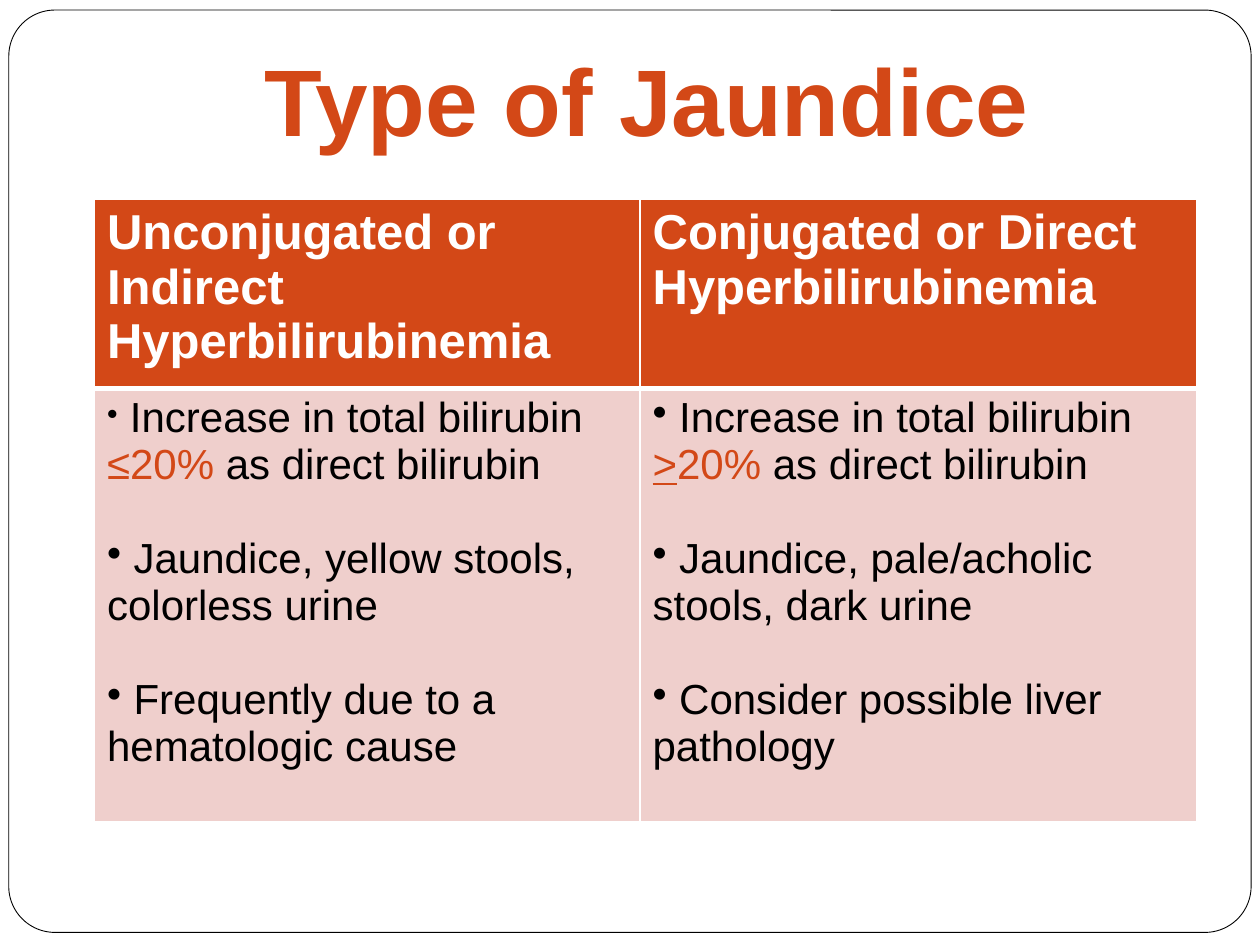
import pptx
import pptx.dml.color
import pptx.enum.shapes
import pptx.enum.text
import pptx.oxml
import pptx.oxml.ns
import pptx.util
from pptx.util import Inches

ACCENT, TINT, WHITE, BLACK = "D34817", "EFCFCC", "FFFFFF", "000000"
FONT = "Arial"
BODY_SIZE = 24

HEADERS = [
    "Unconjugated or Indirect Hyperbilirubinemia",
    "Conjugated or Direct Hyperbilirubinemia",
]
# Each point is a list of runs: text, colour, underlined
POINTS = [
    [
        [(" Increase in total bilirubin ", BLACK, False), ("≤20% ", ACCENT, False),
         ("as direct bilirubin", BLACK, False)],
        [(" Jaundice, yellow stools, colorless urine", BLACK, False)],
        [(" Frequently due to a hematologic cause", BLACK, False)],
    ],
    [
        [(" Increase in total bilirubin ", BLACK, False), (">", ACCENT, True),
         ("20% ", ACCENT, False), ("as direct bilirubin", BLACK, False)],
        [(" Jaundice, pale/acholic stools, dark urine", BLACK, False)],
        [(" Consider possible liver pathology", BLACK, False)],
    ],
]


def color(value):
    return pptx.dml.color.RGBColor.from_string(value)


def set_font(font, size, value, bold=False):
    font.name = FONT
    font.size = pptx.util.Pt(size)
    font.bold = bold
    font.color.rgb = color(value)


def add_frame(slide):
    frame = slide.shapes.add_shape(
        pptx.enum.shapes.MSO_SHAPE.ROUNDED_RECTANGLE,
        Inches(0.07), Inches(0.08), Inches(9.86), Inches(7.32))
    frame.adjustments[0] = 0.05
    frame.shadow.inherit = False
    frame.fill.solid()
    frame.fill.fore_color.rgb = color(WHITE)
    frame.line.color.rgb = color(BLACK)
    frame.line.width = pptx.util.Pt(0.5)


def add_title(slide, text):
    box = slide.shapes.add_textbox(Inches(2), Inches(0.33), Inches(6.42), Inches(1))
    text_frame = box.text_frame
    text_frame.word_wrap = True
    text_frame.vertical_anchor = pptx.enum.text.MSO_ANCHOR.BOTTOM
    text_frame.margin_bottom = Inches(0.1)
    paragraph = text_frame.paragraphs[0]
    paragraph.text = text
    set_font(paragraph.font, 54, ACCENT, bold=True)


def style_cell(cell, fill, bottom_width):
    """Give the cell white borders and a solid fill."""
    properties = cell._tc.get_or_add_tcPr()
    widths = {"lnL": 1, "lnR": 1, "lnT": 1, "lnB": bottom_width}
    for side, width in widths.items():
        properties.append(pptx.oxml.parse_xml(
            f'<a:{side} {pptx.oxml.ns.nsdecls("a")} w="{pptx.util.Pt(width)}">'
            f'<a:solidFill><a:srgbClr val="{WHITE}"/></a:solidFill></a:{side}>'))
    cell.fill.solid()
    cell.fill.fore_color.rgb = color(fill)


def add_bullet(paragraph, percent):
    properties = paragraph._p.get_or_add_pPr()
    properties.set("marL", "0")
    properties.set("indent", "0")
    for tag in (f'buSzPct val="{percent * 1000}"', 'buChar char="•"'):
        name, attribute = tag.split(" ")
        properties.append(pptx.oxml.parse_xml(
            f'<a:{name} {pptx.oxml.ns.nsdecls("a")} {attribute}/>'))


def fill_points(cell, points, first_bullet_percent):
    text_frame = cell.text_frame
    for index, runs in enumerate(points):
        paragraph = text_frame.add_paragraph() if index else text_frame.paragraphs[0]
        if index:
            paragraph.space_before = pptx.util.Pt(27)
        add_bullet(paragraph, 100 if index else first_bullet_percent)
        for text, value, underlined in runs:
            run = paragraph.add_run()
            run.text = text
            set_font(run.font, BODY_SIZE, value)
            if underlined:
                run.font.underline = True


def add_comparison(slide):
    table = slide.shapes.add_table(
        2, 2, Inches(0.75), Inches(1.58), Inches(8.75), Inches(4.84)).table
    for column, width in zip(table.columns, (4.33, 4.42)):
        column.width = Inches(width)
    for row, height in zip(table.rows, (1.4, 3.44)):
        row.height = Inches(height)
    bullet_percents = (75, 100)
    for index, header in enumerate(HEADERS):
        head, body = table.cell(0, index), table.cell(1, index)
        style_cell(head, ACCENT, 3)
        style_cell(body, TINT, 1)
        paragraph = head.text_frame.paragraphs[0]
        paragraph.text = header
        set_font(paragraph.font, 28, WHITE, bold=True)
        fill_points(body, POINTS[index], bullet_percents[index])


def main():
    presentation = pptx.Presentation()
    presentation.slide_width = Inches(10)
    presentation.slide_height = Inches(7.5)
    slide = presentation.slides.add_slide(presentation.slide_layouts[6])
    add_frame(slide)
    add_title(slide, "Type of Jaundice")
    add_comparison(slide)
    presentation.save("out.pptx")


if __name__ == "__main__":
    main()
